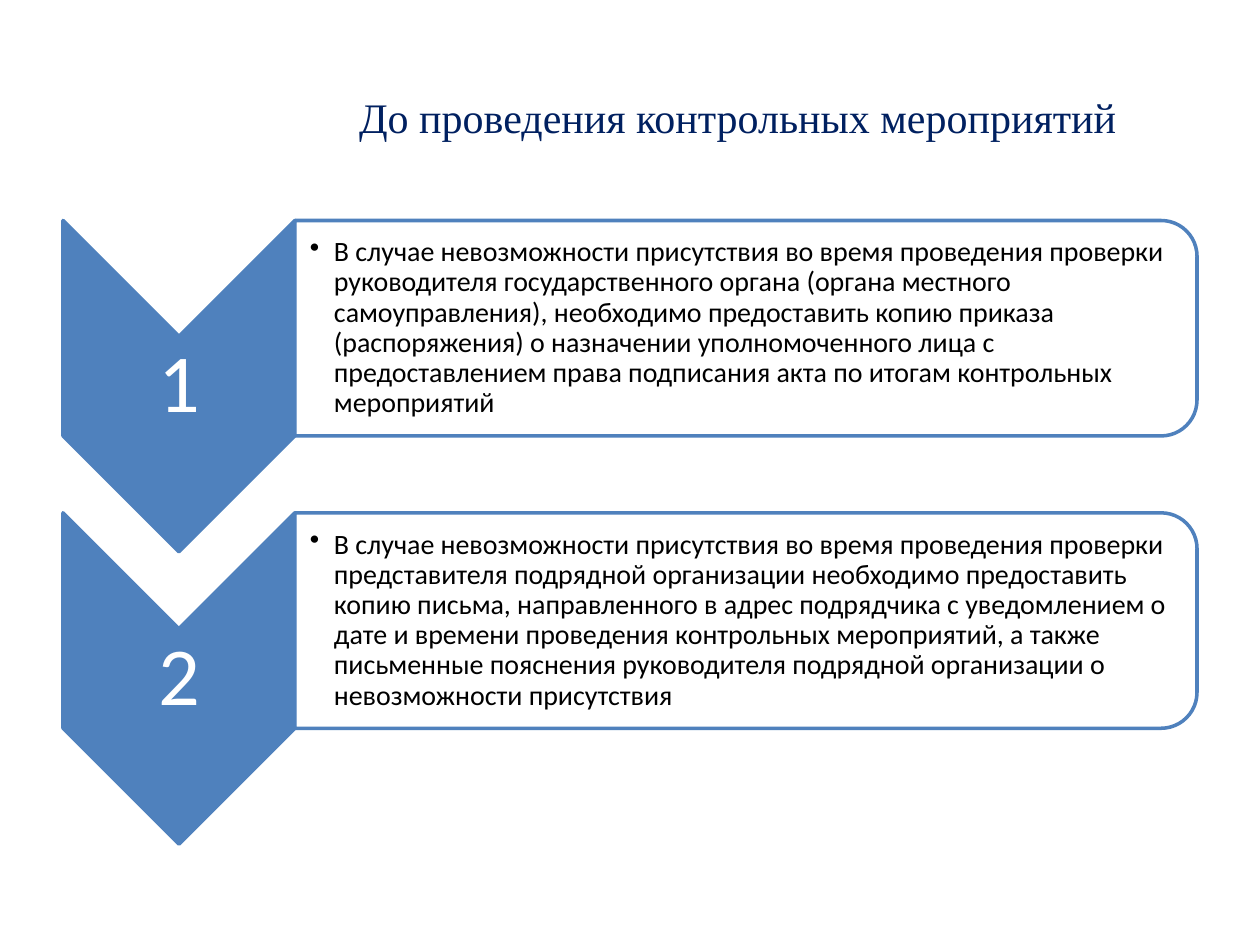
import pptx
import pptx.dml.color
import pptx.enum.shapes
import pptx.enum.text
import pptx.oxml.ns
import pptx.util
from lxml import etree

Inches = pptx.util.Inches
RGBColor = pptx.dml.color.RGBColor
Shape = pptx.enum.shapes.MSO_SHAPE
Align = pptx.enum.text.PP_ALIGN

BLUE = RGBColor(0x4F, 0x81, 0xBD)
NAVY = RGBColor(0x00, 0x20, 0x60)
WHITE = RGBColor(0xFF, 0xFF, 0xFF)
BLACK = RGBColor(0x00, 0x00, 0x00)

TITLE = "До проведения контрольных мероприятий"
STEPS = [
    "В случае невозможности присутствия во время проведения проверки руководителя "
    "государственного органа (органа местного самоуправления), необходимо предоставить "
    "копию приказа (распоряжения) о назначении уполномоченного лица с предоставлением "
    "права подписания акта по итогам контрольных мероприятий",
    "В случае невозможности присутствия во время проведения проверки представителя "
    "подрядной организации необходимо предоставить копию письма, направленного в адрес "
    "подрядчика с уведомлением о дате и времени проведения контрольных мероприятий, а "
    "также письменные пояснения руководителя подрядной организации о невозможности "
    "присутствия",
]

SLIDE_WIDTH, SLIDE_HEIGHT = 10, 7.5
LEFT, FIRST_TOP, ROW_PITCH = 0.5, 1.75, 2.32
CHEVRON_WIDTH, CHEVRON_HEIGHT = 1.84, 2.63
PANEL_WIDTH, PANEL_HEIGHT = 7.16, 1.71
TEXT_WIDTH, TEXT_HEIGHT = 7.08, 1.54
NUMBER_HEIGHT = 0.79
TITLE_INDENT = 2.25


def write_text(shape, text, size, color, font="Calibri", align=Align.LEFT,
               margins=(0.1, 0.05, 0.1, 0.05), spacing=None, indent=0, hanging=0):
    """Fill the shape with one paragraph; a hanging indent also gives it a bullet."""
    frame = shape.text_frame
    frame.word_wrap = True
    frame.vertical_anchor = pptx.enum.text.MSO_ANCHOR.MIDDLE
    (frame.margin_left, frame.margin_top,
     frame.margin_right, frame.margin_bottom) = map(Inches, margins)
    paragraph = frame.paragraphs[0]
    paragraph.alignment = align
    paragraph.line_spacing = spacing
    run = paragraph.add_run()
    run.text = text
    run.font.name = font
    run.font.size = pptx.util.Pt(size)
    run.font.color.rgb = color
    properties = paragraph._p.get_or_add_pPr()
    properties.set("marL", str(Inches(indent)))
    properties.set("indent", str(Inches(-hanging)))
    if hanging:
        bullet = etree.SubElement(properties, pptx.oxml.ns.qn("a:buChar"))
        bullet.set("char", "•")


def add_turned_shape(slide, kind, left, top, width, height, fill):
    """Add a shape turned by 90 degrees that shows in the given box."""
    offset = (width - height) / 2
    shape = slide.shapes.add_shape(
        kind, Inches(left + offset), Inches(top - offset), Inches(height), Inches(width))
    shape.rotation = 90
    shape.shadow.inherit = False
    shape.fill.solid()
    shape.fill.fore_color.rgb = fill
    shape.line.color.rgb = BLUE
    shape.line.width = pptx.util.Pt(2)
    return shape


def add_text_box(slide, left, top, width, height, text, **text_format):
    box = slide.shapes.add_textbox(*map(Inches, (left, top, width, height)))
    write_text(box, text, spacing=0.9, **text_format)


def add_step(slide, index, text):
    top = FIRST_TOP + index * ROW_PITCH
    panel_left = LEFT + CHEVRON_WIDTH
    add_turned_shape(slide, Shape.CHEVRON, LEFT, top, CHEVRON_WIDTH, CHEVRON_HEIGHT, BLUE)
    add_text_box(slide, LEFT, top + CHEVRON_WIDTH / 2, CHEVRON_WIDTH, NUMBER_HEIGHT,
                 str(index + 1), size=47, color=WHITE, align=Align.CENTER,
                 margins=(0.03,) * 4)
    panel = add_turned_shape(slide, Shape.ROUND_2_SAME_RECTANGLE, panel_left, top,
                             PANEL_WIDTH, PANEL_HEIGHT, WHITE)
    fill_color = panel.fill._xPr.find(".//" + pptx.oxml.ns.qn("a:srgbClr"))
    etree.SubElement(fill_color, pptx.oxml.ns.qn("a:alpha")).set("val", "90000")
    add_text_box(slide, panel_left, top + (PANEL_HEIGHT - TEXT_HEIGHT) / 2,
                 TEXT_WIDTH, TEXT_HEIGHT, text, size=16, color=BLACK,
                 margins=(0.12, 0.01, 0.01, 0.01), indent=0.19, hanging=0.19)


def main():
    presentation = pptx.Presentation()
    presentation.slide_width = Inches(SLIDE_WIDTH)
    presentation.slide_height = Inches(SLIDE_HEIGHT)
    slide = presentation.slides.add_slide(presentation.slide_layouts[5])
    title = slide.shapes.title
    title.left, title.top, title.width, title.height = map(
        Inches, (LEFT, 0.3, SLIDE_WIDTH - 2 * LEFT, 1.25))
    write_text(title, TITLE, size=24, color=NAVY, font="Times New Roman",
               indent=TITLE_INDENT)
    for index, text in enumerate(STEPS):
        add_step(slide, index, text)
    presentation.save("out.pptx")


if __name__ == "__main__":
    main()
